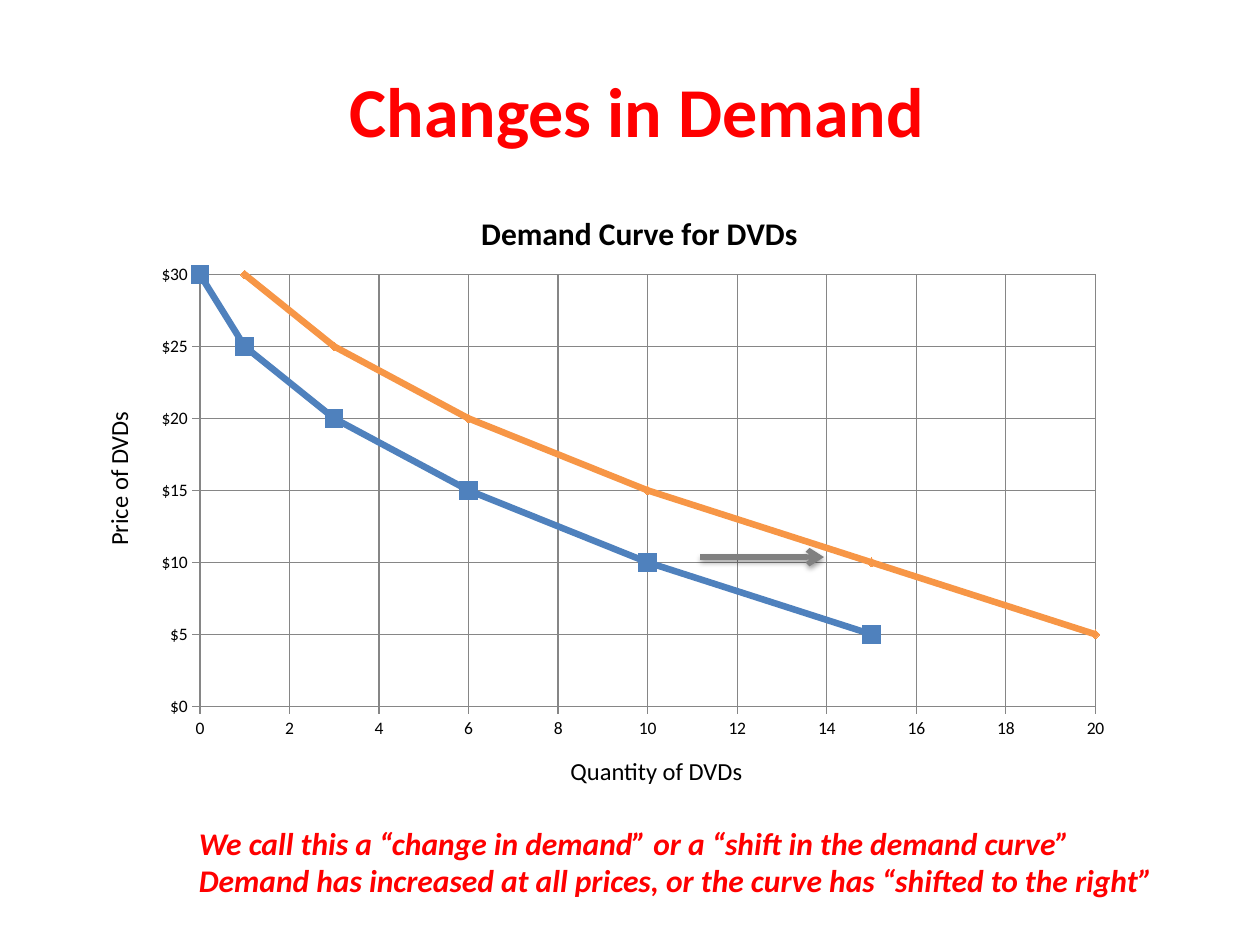
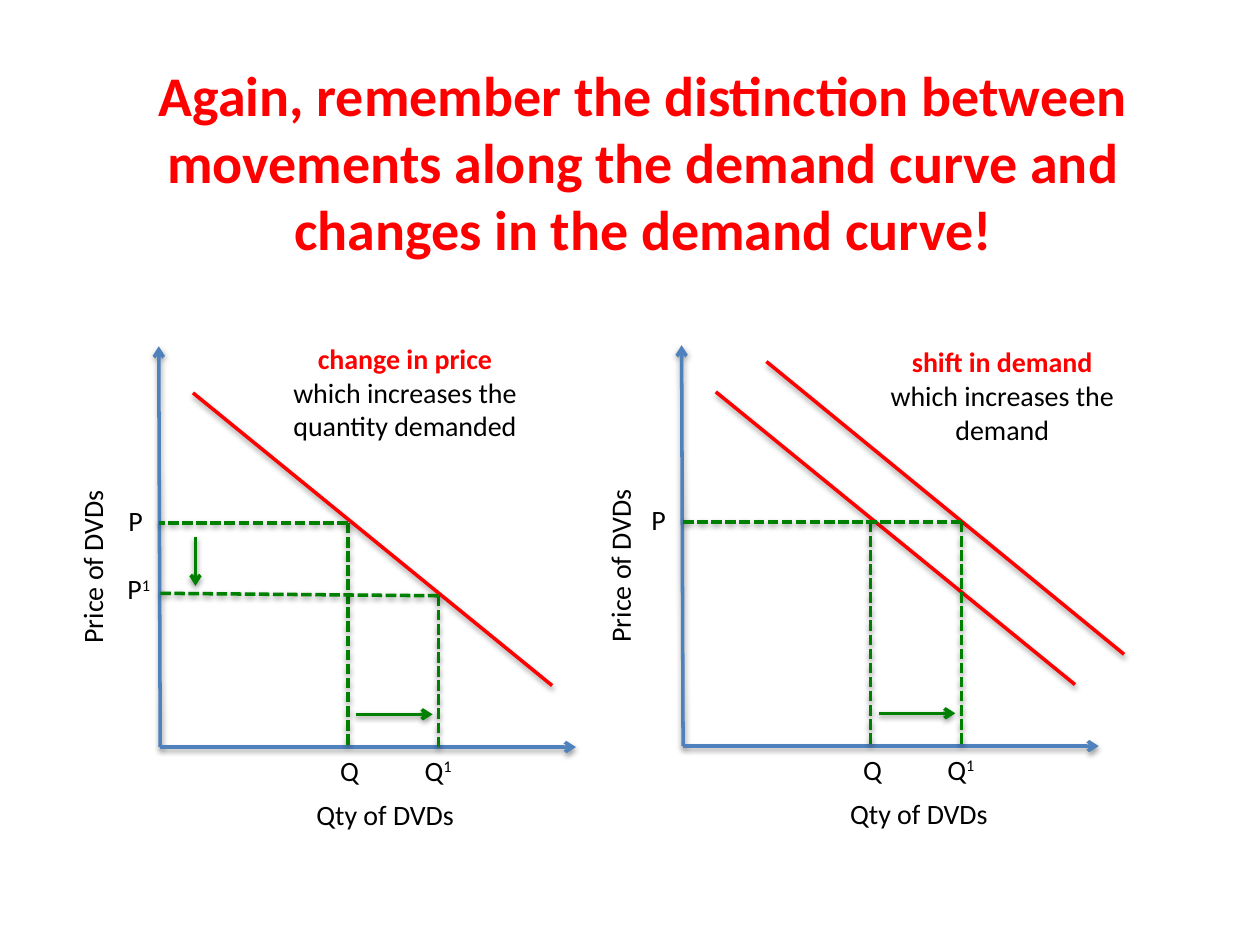
from lxml.etree import SubElement
from pptx import Presentation
from pptx.chart.data import XyChartData
from pptx.dml.color import RGBColor
from pptx.enum.chart import XL_CHART_TYPE, XL_MARKER_STYLE, XL_TICK_MARK
from pptx.enum.dml import MSO_LINE
from pptx.enum.shapes import MSO_CONNECTOR
from pptx.enum.text import MSO_ANCHOR, MSO_AUTO_SIZE, PP_ALIGN
from pptx.oxml import parse_xml
from pptx.oxml.ns import nsdecls, qn
from pptx.util import Cm, Pt

FONT = "Calibri"
RED, BLUE, ORANGE, GREEN = "FF0000", "4F81BD", "F79646", "008000"
BLACK, GREY, GRID = "000000", "808080", "868686"
TITLE_ONLY = 5
ROW = 0.94  # height of a one-line label, cm

SOFT_SHADOW = (
    f'<a:effectLst {nsdecls("a")}>'
    '<a:outerShdw blurRad="40000" dist="20000" dir="5400000" rotWithShape="0">'
    '<a:srgbClr val="000000"><a:alpha val="38000"/></a:srgbClr>'
    "</a:outerShdw></a:effectLst>"
)


# Shared helpers
def rgb(value):
    return RGBColor.from_string(value)


def apply(target, formats):
    for name, value in formats.items():
        setattr(target, name, value)


def style_font(font, color, size, **formats):
    font.color.rgb = rgb(color)
    apply(font, {"name": FONT, "size": Pt(size), **formats})


def add_run(paragraph, words, color, size, superscript=False, **formats):
    run = paragraph.add_run()
    run.text = words
    style_font(run.font, color, size, **formats)
    if superscript:
        run._r.get_or_add_rPr().set("baseline", "30000")


def add_box(shapes, left, top, width, height, wrap=True):
    box = shapes.add_textbox(Cm(left), Cm(top), Cm(width), Cm(height))
    box.text_frame.word_wrap = wrap
    return box


def add_label(shapes, left, top, width, words, size=16, power="", rotation=0):
    label = add_box(shapes, left, top, width, ROW, wrap=False)
    label.rotation = rotation
    paragraph = label.text_frame.paragraphs[0]
    add_run(paragraph, words, BLACK, size)
    if power:
        add_run(paragraph, power, BLACK, size, superscript=True)


def add_line(shapes, start, end, color, width=2, dashed=False, arrow=None):
    """Draw a line; arrow is "headEnd" (at start) or "tailEnd" (at end)."""
    line = shapes.add_connector(
        MSO_CONNECTOR.STRAIGHT, *(Cm(value) for value in (*start, *end))
    )
    line.line.color.rgb = rgb(color)
    line.line.width = Pt(width)
    if dashed:
        line.line.dash_style = MSO_LINE.SQUARE_DOT
    properties = line._element.spPr
    if arrow:
        SubElement(properties.find(qn("a:ln")), qn(f"a:{arrow}"), type="arrow")
    properties.append(parse_xml(SOFT_SHADOW))


def add_titled_slide(deck, words, size, left, top, height):
    slide = deck.slides.add_slide(deck.slide_layouts[TITLE_ONLY])
    title = slide.shapes.title
    apply(title, {"left": Cm(left), "top": Cm(top),
                  "width": Cm(22.58), "height": Cm(height)})
    apply(title.text_frame, {"word_wrap": True, "auto_size": MSO_AUTO_SIZE.NONE,
                             "vertical_anchor": MSO_ANCHOR.TOP})
    paragraph = title.text_frame.paragraphs[0]
    paragraph.alignment = PP_ALIGN.CENTER
    add_run(paragraph, words, RED, size, bold=True)
    return slide


# Demand chart
def place_in_chart(host, index, **fractions):
    """Give a chart part a fixed place, as fractions of the chart."""
    for old in host.findall(qn("c:layout")):
        host.remove(old)
    layout = parse_xml(f'<c:layout {nsdecls("c")}><c:manualLayout/></c:layout>')
    host.insert(index, layout)
    settings = {"xMode": "edge", "yMode": "edge", **fractions}
    if "w" in fractions:
        settings = {"layoutTarget": "inner", **settings}
    for name, value in settings.items():
        SubElement(layout[0], qn(f"c:{name}"), val=str(value))


def style_axis(axis, top_value, step, number_format):
    apply(axis, {"minimum_scale": 0, "maximum_scale": top_value,
                 "major_unit": step, "has_major_gridlines": True,
                 "major_tick_mark": XL_TICK_MARK.CROSS,
                 "minor_tick_mark": XL_TICK_MARK.NONE, "has_title": False})
    apply(axis.tick_labels, {"number_format": number_format,
                             "number_format_is_linked": False})
    for line in (axis.format.line, axis.major_gridlines.format.line):
        line.color.rgb = rgb(GRID)
        line.width = Pt(0.75)


def add_demand_chart(slide, left, top, width, height):
    prices = (30, 25, 20, 15, 10, 5)
    curves = (
        ("Series 1", (1, 3, 6, 10, 15, 20), ORANGE, XL_MARKER_STYLE.AUTOMATIC, 5),
        ("Series 2", (0, 1, 3, 6, 10, 15), BLUE, XL_MARKER_STYLE.SQUARE, 10),
    )
    data = XyChartData()
    for name, quantities, *_ in curves:
        curve = data.add_series(name)
        for quantity, price in zip(quantities, prices):
            curve.add_data_point(quantity, price)
    chart = slide.shapes.add_chart(
        XL_CHART_TYPE.XY_SCATTER_LINES,
        Cm(left), Cm(top), Cm(width), Cm(height), data,
    ).chart
    chart.has_legend = False
    style_font(chart.font, BLACK, 10)
    chart.plots[0].vary_by_categories = False

    for series, (_, _, color, marker, size) in zip(chart.plots[0].series, curves):
        series.smooth = False
        series.format.line.color.rgb = rgb(color)
        series.format.line.width = Pt(3.75)
        apply(series.marker, {"style": marker, "size": size})
        series.marker.format.fill.solid()
        series.marker.format.fill.fore_color.rgb = rgb(color)
        series.marker.format.line.color.rgb = rgb(color)

    style_axis(chart.category_axis, 20, 2, "0")
    style_axis(chart.value_axis, 30, 5, '"$"0')
    chart.has_title = True
    heading = chart.chart_title.text_frame.paragraphs[0]
    add_run(heading, "Demand Curve for DVDs", BLACK, 18, bold=True)
    place_in_chart(chart.element.xpath(".//c:plotArea")[0], 0,
                   x=0.06, y=0.17, w=0.91, h=0.75)
    place_in_chart(chart.element.xpath("./c:chart/c:title")[0], 1, x=0.34, y=0.05)

    # Axis names and the shift arrow, relative to the chart's box
    add_line(slide.shapes, (left + 11.28, top + 7.67), (left + 13.77, top + 7.67),
             GREY, width=3, arrow="tailEnd")
    add_label(slide.shapes, left - 2.03, top + 5.6, 3.25, "Price of DVDs", 14,
              rotation=270)
    add_label(slide.shapes, left + 8.41, top + 11.56, 4.01, "Quantity of DVDs", 14)


def add_conclusion(slide, left, top, width, height):
    lines = (
        "We call this a “change in demand” or a “shift in the demand curve”",
        "Demand has increased at all prices, or the curve has “shifted to the right”",
    )
    frame = add_box(slide.shapes, left, top, width, height).text_frame
    for number, words in enumerate(lines):
        paragraph = frame.add_paragraph() if number else frame.paragraphs[0]
        add_run(paragraph, words, RED, 18, bold=True, italic=True)


# Price and quantity diagrams, relative to the point where the axes meet
PRICE, NEW_PRICE = -4.52, -3.05
QUANTITY, NEW_QUANTITY = 3.78, 5.61
DEMAND = ((0.66, -7.14), (7.9, -1.24))
SHIFTED_DEMAND = ((1.68, -7.75), (8.89, -1.85))


def add_diagram(slide, left, top, shifted, price_label_x, quantity_label_x):
    shapes = slide.shapes.add_group_shape().shapes

    def line(start, end, color, **formats):
        add_line(shapes, (left + start[0], top + start[1]),
                 (left + end[0], top + end[1]), color, **formats)

    def label(x, y, width, words, **formats):
        add_label(shapes, left + x, top + y, width, words, **formats)

    # Axes and curves
    line((-0.03, -8.08), (0, 0), BLUE, arrow="headEnd")
    line((0, 0), (8.38, 0), BLUE, arrow="tailEnd")
    for curve in (DEMAND, SHIFTED_DEMAND)[:2 if shifted else 1]:
        line(*curve, RED)

    # Guides from each point on a curve to the axes
    new_level = PRICE if shifted else NEW_PRICE
    guides = [
        ((QUANTITY, PRICE), (QUANTITY, 0)),
        ((NEW_QUANTITY, new_level), (NEW_QUANTITY, 0)),
        ((NEW_QUANTITY if shifted else QUANTITY, PRICE), (-0.03, PRICE)),
    ]
    if not shifted:
        guides.append(((NEW_QUANTITY, NEW_PRICE), (-0.03, NEW_PRICE - 0.05)))
        line((0.71, -4.24), (0.71, -3.25), GREEN, arrow="tailEnd")
        label(-0.91, -3.66, 0.99, "P", power="1")
    for guide in guides:
        line(*guide, GREEN, dashed=True)
    line((3.94, -0.66), (5.49, -0.66), GREEN, arrow="tailEnd")

    # Labels
    label(-0.89, -5.03, 0.81, "P")
    label(3.38, 0, 0.91, "Q")
    label(5.08, 0, 1.09, "Q", power="1")
    label(price_label_x, -4.14, 3.66, "Price of DVDs", rotation=270)
    label(quantity_label_x, 0.89, 3.33, "Qty of DVDs")


def add_note(slide, left, top, cause, effect):
    note = add_box(slide.shapes, left, top, 5.41, 2.31)
    paragraph = note.text_frame.paragraphs[0]
    paragraph.alignment = PP_ALIGN.CENTER
    add_run(paragraph, cause + " ", RED, 16, bold=True)
    add_run(paragraph, effect, BLACK, 16, bold=False)


# Slides
def build_changes_slide(deck):
    slide = add_titled_slide(deck, "Changes in Demand", 40, 1.55, 1.24, 1.96)
    add_demand_chart(slide, 2.84, 3.56, 19.84, 11.61)
    add_conclusion(slide, 3.76, 16.48, 21.89, 1.8)


def build_distinction_slide(deck):
    slide = add_titled_slide(
        deck,
        "Again, remember the distinction between movements along the demand "
        "curve and changes in the demand curve!",
        32, 1.68, 1.09, 4.37,
    )
    add_diagram(slide, 3.23, 15.06, False, -3.2, 2.9)
    add_diagram(slide, 13.77, 15.04, True, -3.1, 3.12)
    add_note(slide, 5.46, 6.76, "change in price",
             "which increases the quantity demanded")
    add_note(slide, 17.5, 6.83, "shift in demand", "which increases the demand")


def main():
    deck = Presentation()
    apply(deck, {"slide_width": Cm(25.4), "slide_height": Cm(19.05)})
    build_changes_slide(deck)
    build_distinction_slide(deck)
    deck.save("out.pptx")


if __name__ == "__main__":
    main()
